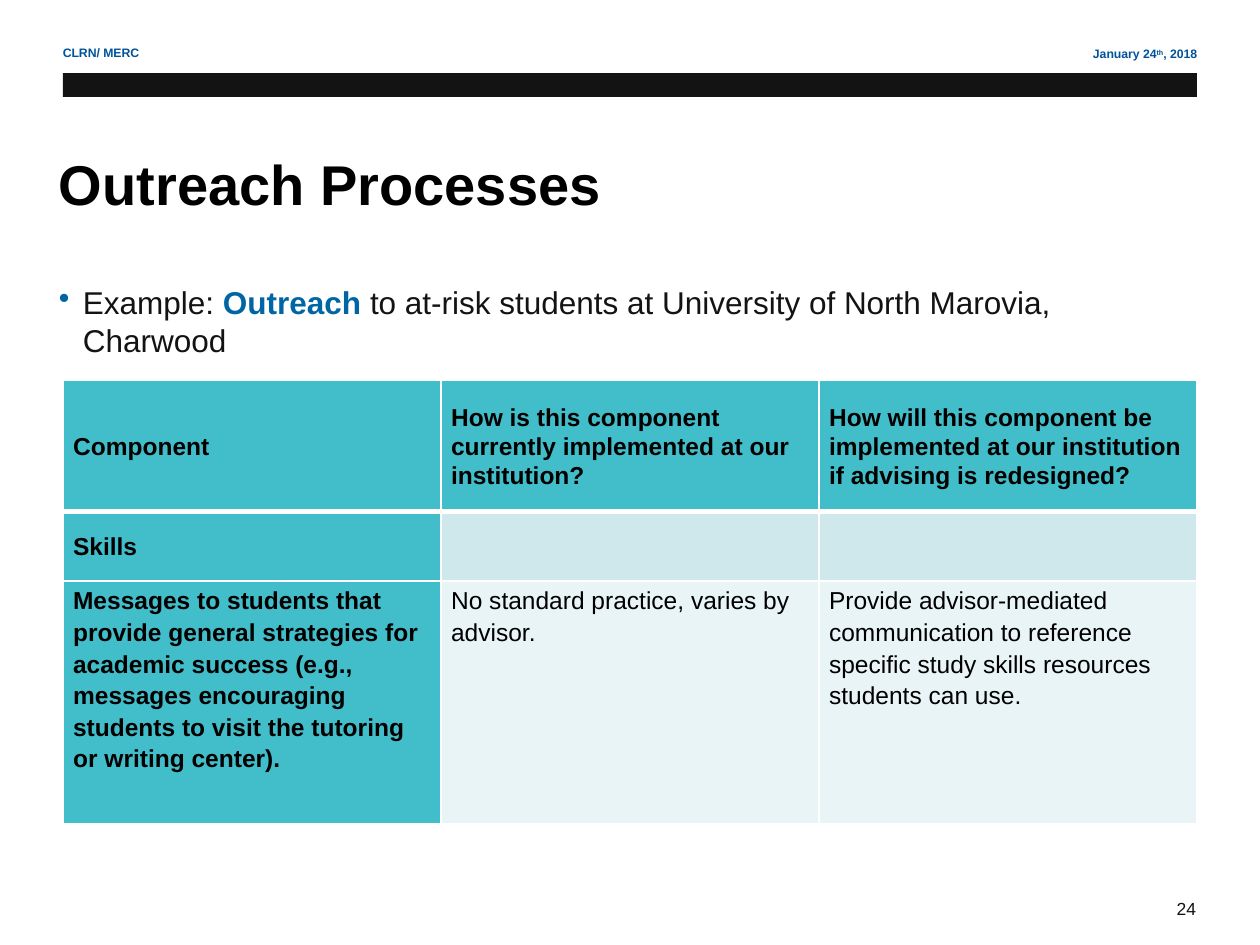
import pptx
import pptx.util
import pptx.dml.color
import pptx.enum.shapes
import pptx.enum.text
import pptx.oxml
import pptx.oxml.ns
from pptx.util import Inches

RGBColor = pptx.dml.color.RGBColor
Align = pptx.enum.text.PP_ALIGN
Anchor = pptx.enum.text.MSO_ANCHOR

BLACK = RGBColor(0x00, 0x00, 0x00)
INK = RGBColor(0x14, 0x13, 0x13)
NAVY = RGBColor(0x00, 0x53, 0x9B)
BLUE = RGBColor(0x00, 0x65, 0xA4)
WHITE = RGBColor(0xFF, 0xFF, 0xFF)
TEAL = RGBColor(0x42, 0xBE, 0xCA)
PALE_TEAL = RGBColor(0xCF, 0xE8, 0xEC)
PALEST_TEAL = RGBColor(0xE9, 0xF4, 0xF6)

ROWS = [
    ["Component",
     "How is this component currently implemented at our institution?",
     "How will this component be implemented at our institution if advising is redesigned?"],
    ["Skills", "", ""],
    ["Messages to students that provide general strategies for academic success "
     "(e.g., messages encouraging students to visit the tutoring or writing center).",
     "No standard practice, varies by advisor.",
     "Provide advisor-mediated communication to reference specific study skills "
     "resources students can use."],
]
ROW_HEIGHTS = [1.04, 0.55, 1.93]
ROW_FILLS = [TEAL, PALE_TEAL, PALEST_TEAL]


def style_font(font, size, color, bold=False):
    font.name = "Arial"
    font.size = pptx.util.Pt(size)
    font.bold = bold
    font.color.rgb = color


def add_text(slide, box, runs, size, color, bold=False, align=Align.LEFT, anchor=Anchor.TOP):
    shape = slide.shapes.add_textbox(*map(Inches, box))
    frame = shape.text_frame
    frame.word_wrap = True
    frame.vertical_anchor = anchor
    paragraph = frame.paragraphs[0]
    paragraph.alignment = align
    style_font(paragraph.font, size, color, bold)
    for text in runs:
        paragraph.add_run().text = text
    return paragraph


def add_bullet(paragraph, color, indent):
    properties = paragraph._p.get_or_add_pPr()
    properties.set("marL", str(Inches(indent)))
    properties.set("indent", str(-Inches(indent)))
    namespace = pptx.oxml.ns.nsdecls("a")
    bullet_parts = [
        f'<a:buClr {namespace}><a:srgbClr val="{color}"/></a:buClr>',
        f'<a:buChar {namespace} char="•"/>',
    ]
    for position, xml in enumerate(bullet_parts):
        properties.insert(position, pptx.oxml.parse_xml(xml))


def add_bar(slide, box, color):
    shape = slide.shapes.add_shape(
        pptx.enum.shapes.MSO_SHAPE.RECTANGLE, *map(Inches, box))
    shape.shadow.inherit = False
    shape.fill.solid()
    shape.fill.fore_color.rgb = color
    shape.line.fill.background()


def set_borders(cell, widths):
    properties = cell._tc.get_or_add_tcPr()
    for position, (side, width) in enumerate(widths.items()):
        properties.insert(position, pptx.oxml.parse_xml(
            f'<a:{side} {pptx.oxml.ns.nsdecls("a")} w="{pptx.util.Pt(width)}">'
            f'<a:solidFill><a:srgbClr val="{WHITE}"/></a:solidFill></a:{side}>'))


def fill_cell(cell, text, row, column):
    is_header = row == 0
    is_last = row == len(ROWS) - 1
    cell.fill.solid()
    cell.fill.fore_color.rgb = TEAL if column == 0 else ROW_FILLS[row]
    cell.margin_left = cell.margin_right = Inches(0.08)
    cell.margin_top = cell.margin_bottom = Inches(0.04 if is_header else 0.02)
    cell.vertical_anchor = Anchor.TOP if is_last else Anchor.MIDDLE
    cell.text = text
    paragraph = cell.text_frame.paragraphs[0]
    paragraph.line_spacing = 1.15 if is_last else 1.07
    style_font(paragraph.font, 14, BLACK, is_header or column == 0)
    set_borders(cell, {"lnL": 1, "lnR": 1, "lnT": 3 if row == 1 else 1,
                       "lnB": 3 if is_header else 1})


def add_component_table(slide):
    frame = slide.shapes.add_table(
        len(ROWS), len(ROWS[0]), Inches(0.5), Inches(3.02), Inches(9), Inches(sum(ROW_HEIGHTS)))
    table = frame.table
    for row, texts in enumerate(ROWS):
        table.rows[row].height = Inches(ROW_HEIGHTS[row])
        for column, text in enumerate(texts):
            fill_cell(table.cell(row, column), text, row, column)


def main():
    presentation = pptx.Presentation()
    presentation.slide_width = Inches(10)
    presentation.slide_height = Inches(7.5)
    slide = presentation.slides.add_slide(presentation.slide_layouts[6])

    date = add_text(slide, (6.42, 0.32, 3.18, 0.22), ["January 24", "th", ", 2018"],
                    7, NAVY, True, Align.RIGHT)
    date.runs[1].font._element.set("baseline", "30000")
    add_text(slide, (9.24, 7.08, 0.46, 0.27), ["24"], 10, INK)
    add_bar(slide, (0.5, 0.58, 9, 0.19), INK)
    add_text(slide, (0.4, 0.31, 3.56, 0.22), ["CLRN/ MERC"], 7, NAVY, True)

    example = add_text(
        slide, (0.37, 2.2, 9, 0.69),
        ["Example: ", "Outreach",
         " to at-risk students at University of North Marovia, Charwood"], 18, INK)
    add_bullet(example, BLUE, 0.19)
    style_font(example.runs[1].font, 18, BLUE, True)

    add_text(slide, (0.37, 0.83, 9, 1.25), ["Outreach Processes"], 32, BLACK, True,
             anchor=Anchor.MIDDLE)
    add_component_table(slide)
    presentation.save("out.pptx")


if __name__ == "__main__":
    main()
